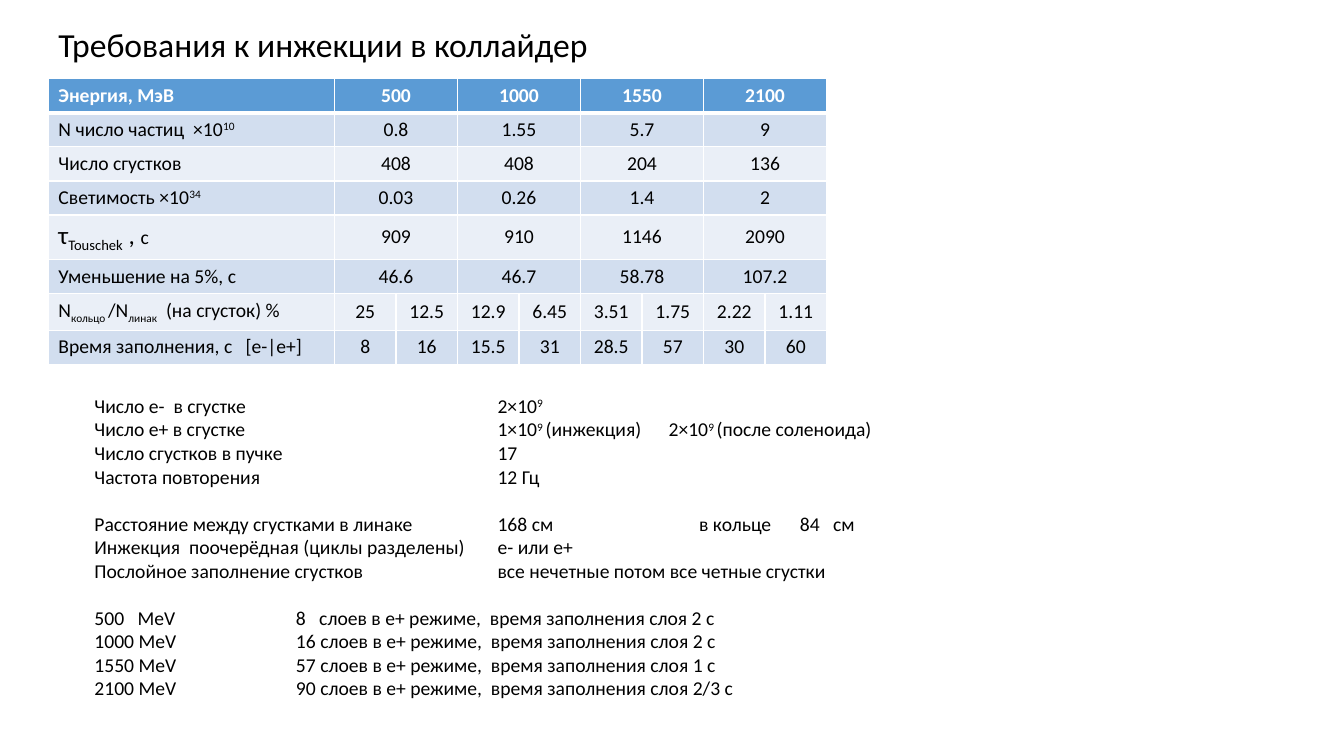
from lxml.etree import SubElement
from pptx import Presentation
from pptx.dml.color import RGBColor
from pptx.enum.text import MSO_ANCHOR, MSO_AUTO_SIZE, PP_ALIGN
from pptx.oxml.ns import qn
from pptx.util import Cm, Pt

WHITE = RGBColor(0xFF, 0xFF, 0xFF)
BLACK = RGBColor(0, 0, 0)
HEADER_BLUE = RGBColor(0x5B, 0x9B, 0xD5)
BAND_DARK = RGBColor(0xD2, 0xDE, 0xEF)
BAND_LIGHT = RGBColor(0xEA, 0xEF, 0xF7)
SUPER, SUB = 30000, -25000
LABEL_WIDTH, VALUE_WIDTH, ROW_HEIGHT = 7.21, 1.55, 0.86

PARAMETERS = [
    ("Энергия, МэВ", ["500", "1000", "1550", "2100"]),
    (["N число частиц  ×10", ("10", SUPER)], ["0.8", "1.55", "5.7", "9"]),
    ("Число сгустков", ["408", "408", "204", "136"]),
    (["Светимость ×10", ("34", SUPER)], ["0.03", "0.26", "1.4", "2"]),
    ([("τ", 0, 18), ("Touschek", SUB, 18), (" , ", 0, 18), "c"], ["909", "910", "1146", "2090"]),
    ("Уменьшение на 5%, с", ["46.6", "46.7", "58.78", "107.2"]),
    (["N", ("кольцо ", SUB), "/N", ("линак", SUB), "  (на сгусток) %"],
     ["25", "12.5", "12.9", "6.45", "3.51", "1.75", "2.22", "1.11"]),
    ("Время заполнения, с   [e-|e+]", ["8", "16", "15.5", "31", "28.5", "57", "30", "60"]),
]

NOTE_BLOCKS = [
    ([10.16, 14.47], [
        ["Число е-  в сгустке\t2×10", ("9", SUPER)],
        ["Число е+ в сгустке\t1×10", ("9 ", SUPER), "(инжекция)\t2×10", ("9 ", SUPER), "(после соленоида)"],
        "Число сгустков в пучке\t17",
        "Частота повторения\t12 Гц",
    ]),
    ([10.16, 15.24, 17.78], [
        "Расстояние между сгустками в линаке\t168 см\tв кольце\t84   см",
        "Инжекция  поочерёдная (циклы разделены)\tе- или е+",
        "Послойное заполнение сгустков\tвсе нечетные потом все четные сгустки",
    ]),
    ([5.08], [
        "500   MeV\t8   слоев в е+ режиме,  время заполнения слоя 2 с",
        "1000 MeV\t16 слоев в е+ режиме,  время заполнения слоя 2 с",
        "1550 MeV\t57 слоев в е+ режиме,  время заполнения слоя 1 с",
        "2100 MeV\t90 слоев в е+ режиме,  время заполнения слоя 2/3 с",
    ]),
]


def write(paragraph, text, size=14, color=BLACK, bold=False, align=PP_ALIGN.LEFT, before=0, tabs=()):
    """Fill a paragraph from a string or a list of strings and (text, baseline, size) parts."""
    paragraph.alignment = align
    paragraph.space_before = Pt(before)
    if tabs:
        stops = SubElement(paragraph._p.get_or_add_pPr(), qn("a:tabLst"))
        for stop in tabs:
            SubElement(stops, qn("a:tab"), pos=str(Cm(stop)), algn="l")
    for part in [text] if isinstance(text, str) else text:
        words, baseline, part_size = ((part,) if isinstance(part, str) else part) + (0, size)[
            (0 if isinstance(part, str) else len(part) - 1):]
        run = paragraph.add_run()
        run.text = words
        run.font.name = "Calibri"
        run.font.size = Pt(part_size)
        run.font.bold = bold
        run.font.color.rgb = color
        if baseline:
            run._r.get_or_add_rPr().set("baseline", str(baseline))


def paint_cell(cell, fill, top=1, bottom=1):
    """Give a cell white borders and a solid fill."""
    properties = cell._tc.get_or_add_tcPr()
    for side, width in (("L", 1), ("R", 1), ("T", top), ("B", bottom)):
        border = SubElement(properties, qn(f"a:ln{side}"), w=str(Pt(width)))
        SubElement(SubElement(border, qn("a:solidFill")), qn("a:srgbClr"), val=str(WHITE))
    cell.fill.solid()
    cell.fill.fore_color.rgb = fill
    cell.vertical_anchor = MSO_ANCHOR.MIDDLE


def add_text_area(slide, left, top, width, height, wrap):
    """Add an empty text box and return its text frame."""
    frame = slide.shapes.add_textbox(Cm(left), Cm(top), Cm(width), Cm(height)).text_frame
    frame.word_wrap = wrap
    frame.auto_size = MSO_AUTO_SIZE.SHAPE_TO_FIT_TEXT
    return frame


def add_title(slide, left, top, width, height):
    """Place the heading."""
    frame = add_text_area(slide, left, top, width, height, wrap=False)
    write(frame.paragraphs[0], "Требования к инжекции в коллайдер", size=24)


def add_parameters(slide, left, top):
    """Place the table of collider parameters by energy."""
    value_columns = 8
    table = slide.shapes.add_table(
        len(PARAMETERS), value_columns + 1, Cm(left), Cm(top),
        Cm(LABEL_WIDTH + value_columns * VALUE_WIDTH), Cm(ROW_HEIGHT * len(PARAMETERS))).table
    table.horz_banding = False
    for index, column in enumerate(table.columns):
        column.width = Cm(VALUE_WIDTH if index else LABEL_WIDTH)
    for row, (label, values) in enumerate(PARAMETERS):
        header = row == 0
        fill = HEADER_BLUE if header else BAND_DARK if row % 2 else BAND_LIGHT
        color = WHITE if header else BLACK
        for column in range(value_columns + 1):
            paint_cell(table.cell(row, column), fill, top=3 if row == 1 else 1, bottom=3 if header else 1)
        write(table.cell(row, 0).text_frame.paragraphs[0], label, color=color, bold=header)
        span = value_columns // len(values)
        for index, value in enumerate(values):
            first = 1 + index * span
            cell = table.cell(row, first)
            if span > 1:
                cell.merge(table.cell(row, first + span - 1))
            write(cell.text_frame.paragraphs[0], value, color=color, bold=header, align=PP_ALIGN.CENTER)


def add_notes_text(slide, left, top, width, height):
    """Place the blocks of injection details, aligned by tab stops."""
    frame = add_text_area(slide, left, top, width, height, wrap=True)
    for block, (tabs, lines) in enumerate(NOTE_BLOCKS):
        for index, line in enumerate(lines):
            starts_text = block == index == 0
            paragraph = frame.paragraphs[0] if starts_text else frame.add_paragraph()
            write(paragraph, line, before=16.8 if block and index == 0 else 0, tabs=tabs)


def main():
    """Build and save the slide."""
    deck = Presentation()
    deck.slide_width, deck.slide_height = Cm(33.87), Cm(19.05)
    slide = deck.slides.add_slide(deck.slide_layouts[6])
    add_parameters(slide, 1.22, 1.98)
    add_title(slide, 1.22, 0.48, 14.1, 1.27)
    add_notes_text(slide, 2.13, 9.8, 25.93, 8.03)
    deck.save("out.pptx")


if __name__ == "__main__":
    main()
